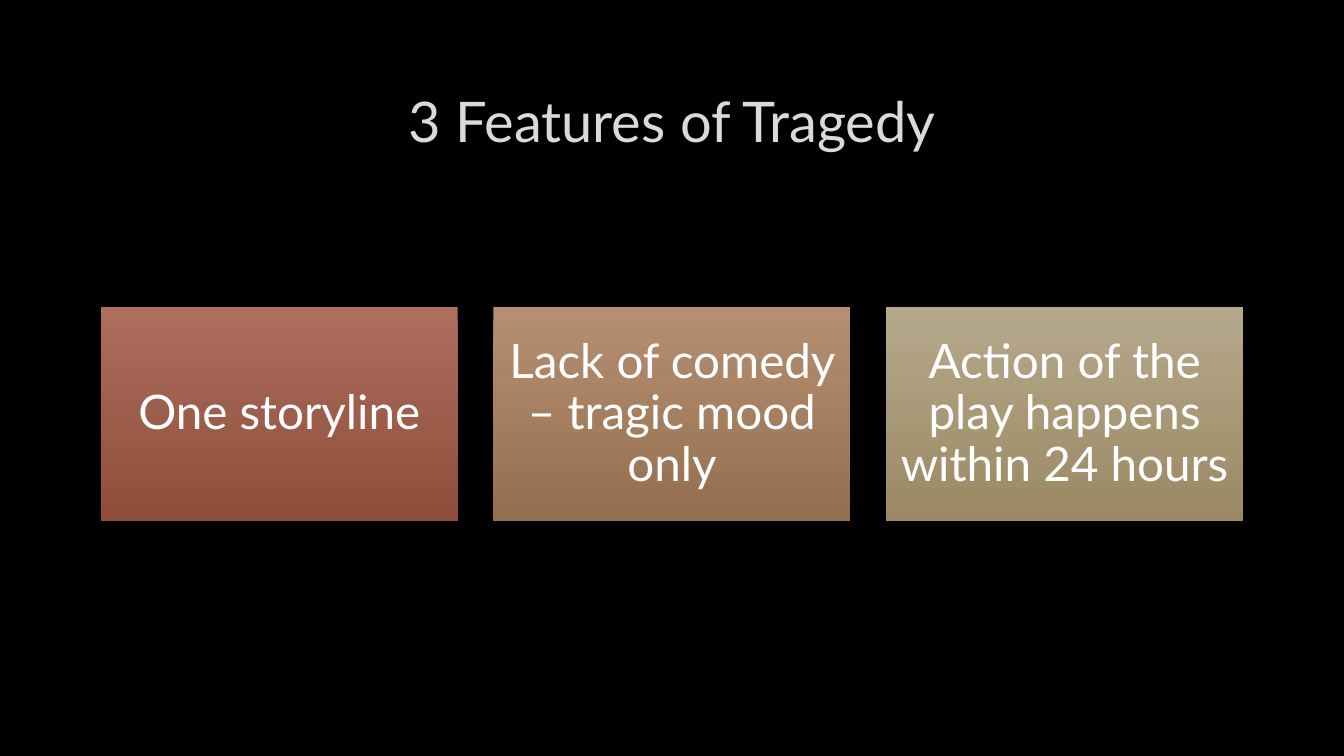
from dataclasses import dataclass

from pptx import Presentation
from pptx import util as u
from pptx.dml.color import RGBColor
from pptx.enum import shapes, text


@dataclass(frozen=True)
class Theme:
    font: str = "Lato"
    background: str = "000000"
    title_color: str = "DADADA"
    card_color: str = "FFFFFF"
    title_size: int = 40
    card_size: int = 34
    card_gradients: tuple = (
        ("AD6E5E", "8E4D3A"),
        ("B58F71", "946F4F"),
        ("B6A88B", "9A8964"),
    )


@dataclass(frozen=True)
class Area:
    """A rectangle in columns and rows of the grid."""
    column: float
    row: float
    columns: float
    rows: float


@dataclass(frozen=True)
class Card:
    label: str
    gradient: tuple
    area: Area


THEME = Theme()

# Grid: 40 square cells across the slide
SLIDE_WIDTH, SLIDE_HEIGHT = u.Inches(13.33), u.Inches(7.5)
CELL = SLIDE_WIDTH / 40
MARGIN, CONTENT_COLUMNS = 3, 34
TITLE_AREA = Area(MARGIN, 2, CONTENT_COLUMNS, 3.18)

# Cards: the gap is a tenth of a card's width, the height six tenths
FEATURES = (
    "One storyline",
    "Lack of comedy – tragic mood only",
    "Action of the play happens within 24 hours",
)
GAP_SHARE, HEIGHT_SHARE = 0.1, 0.6
CARD_ROW = 9.15
CARD_COLUMNS = CONTENT_COLUMNS / (len(FEATURES) + GAP_SHARE * (len(FEATURES) - 1))


def place(area: Area) -> tuple:
    lengths = (area.column, area.row, area.columns, area.rows)
    return tuple(u.Emu(round(length * CELL)) for length in lengths)


def write(box, words: str, *, size: int, color: str, inset: float = 0.1,
          line_spacing: float = 1.0) -> None:
    frame = box.text_frame
    frame.word_wrap = True
    frame.vertical_anchor = text.MSO_ANCHOR.MIDDLE
    frame.margin_left = frame.margin_right = u.Inches(inset)
    frame.margin_top = frame.margin_bottom = u.Inches(inset)
    para = frame.paragraphs[0]
    para.alignment = text.PP_ALIGN.CENTER
    para.line_spacing = line_spacing
    span = para.add_run()
    span.text = words
    span.font.name = THEME.font
    span.font.size = u.Pt(size)
    span.font.color.rgb = RGBColor.from_string(color)


def draw_card(page, card: Card) -> None:
    box = page.shapes.add_shape(shapes.MSO_SHAPE.RECTANGLE, *place(card.area))
    box.shadow.inherit = False
    box.line.fill.background()
    box.fill.gradient()
    box.fill.gradient_angle = 270  # top to bottom
    for stop, color, position in zip(box.fill.gradient_stops, card.gradient, (0, 1)):
        stop.color.rgb = RGBColor.from_string(color)
        stop.position = position
    write(box, card.label, size=THEME.card_size, color=THEME.card_color,
          inset=0.14, line_spacing=0.9)


def main() -> None:
    deck = Presentation()
    deck.slide_width, deck.slide_height = SLIDE_WIDTH, SLIDE_HEIGHT
    page = deck.slides.add_slide(deck.slide_layouts[6])

    # Background
    page.background.fill.solid()
    page.background.fill.fore_color.rgb = RGBColor.from_string(THEME.background)

    # Title
    title = page.shapes.add_textbox(*place(TITLE_AREA))
    write(title, "3 Features of Tragedy", size=THEME.title_size, color=THEME.title_color)

    # Feature cards
    for index, (label, gradient) in enumerate(zip(FEATURES, THEME.card_gradients)):
        column = MARGIN + index * CARD_COLUMNS * (1 + GAP_SHARE)
        area = Area(column, CARD_ROW, CARD_COLUMNS, CARD_COLUMNS * HEIGHT_SHARE)
        draw_card(page, Card(label, gradient, area))

    deck.save("out.pptx")


if __name__ == "__main__":
    main()
